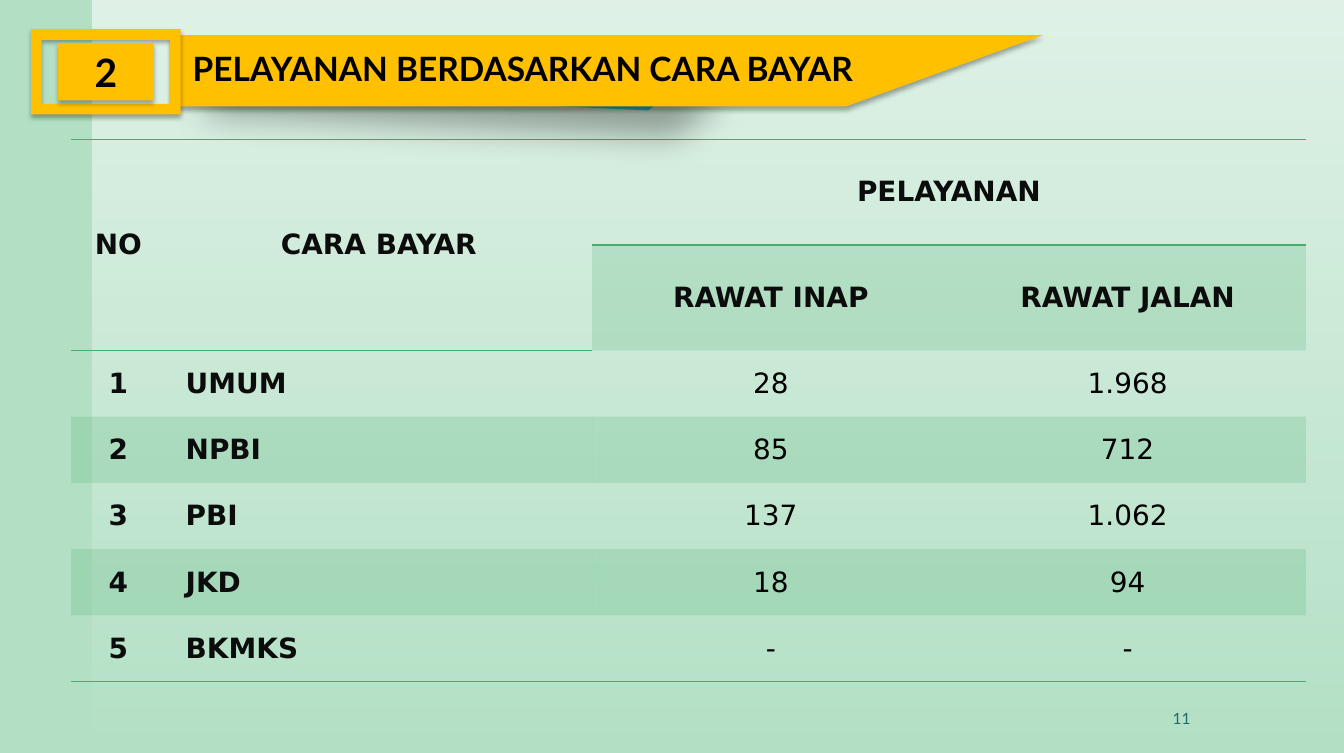
import dataclasses

import pptx
import pptx.dml.color
import pptx.enum.shapes
import pptx.enum.text
import pptx.oxml
import pptx.oxml.ns
import pptx.util
from pptx.util import Inches

qn = pptx.oxml.ns.qn
SHAPE = pptx.enum.shapes.MSO_SHAPE
ALIGN = pptx.enum.text.PP_ALIGN
MIDDLE = pptx.enum.text.MSO_ANCHOR.MIDDLE


@dataclasses.dataclass(frozen=True)
class Theme:
    """Colours, fonts and type sizes of the slide."""
    background: str = "B3E0C5"
    white: str = "FFFFFF"
    black: str = "000000"
    ink: str = "0C0C0C"
    green: str = "46AC6F"
    gold: str = "FFC000"
    teal: str = "1B91A1"
    page_number: str = "1F696F"
    heading_font: str = "Lato"
    table_font: str = "DejaVu Sans"
    badge_size: float = 28
    title_size: float = 24
    table_size: float = 20
    number_size: float = 11.1


THEME = Theme()
SOFT_SHADOW = (32, 3.5, 2.2, 90)
WIDE_SHADOW = (35, 25, 25, 45)
NO_GRID_STYLE = "{2D5ABB26-0587-4C30-8999-92F81FD0307C}"
COLUMNS = (0.94, 4.25, 3.56, 3.55)
HEADER_ROWS = (1.05, 1.05)
BODY_ROW = 0.66
HEADERS = (("NO", "CARA BAYAR", "PELAYANAN", ""), ("", "", "RAWAT INAP", "RAWAT JALAN"))
PAYMENTS = (
    ("1", "UMUM", "28", "1.968"),
    ("2", "NPBI", "85", "712"),
    ("3", "PBI", "137", "1.062"),
    ("4", "JKD", "18", "94"),
    ("5", "BKMKS", "-", "-"),
)


def rgb(code):
    """Turn a hex code into a colour."""
    return pptx.dml.color.RGBColor.from_string(code)


def xml(body):
    """Parse one element in the drawing namespace."""
    head, tail = body.split(" ", 1)
    return pptx.oxml.parse_xml(f"{head} {pptx.oxml.ns.nsdecls('a')} {tail}")


def set_alpha(colour, percent):
    """Give a colour element an opacity."""
    colour.append(xml(f'<a:alpha val="{percent * 1000}"/>'))


def write(frame, text, font, size, colour, bold=False, align=ALIGN.LEFT):
    """Fill a text frame with one formatted paragraph."""
    frame.text = text
    para = frame.paragraphs[0]
    para.alignment = align
    para.font.name = font
    para.font.size = pptx.util.Pt(size)
    para.font.bold = bold
    para.font.color.rgb = rgb(colour)


def paint(shape, colour, shadow):
    """Fill a shape without outline and cast a shadow."""
    shape.fill.solid()
    shape.fill.fore_color.rgb = rgb(colour)
    shape.line.fill.background()
    shape.shadow.inherit = False
    opacity, blur, distance, angle = shadow
    shape.element.spPr.find(qn("a:effectLst")).append(xml(
        f'<a:outerShdw blurRad="{pptx.util.Pt(blur)}" dist="{pptx.util.Pt(distance)}" '
        f'dir="{angle * 60000}" algn="ctr" rotWithShape="0"><a:srgbClr val="{THEME.black}">'
        f'<a:alpha val="{opacity * 1000}"/></a:srgbClr></a:outerShdw>'))


def add_preset(page, kind, left, top, width, height):
    """Add a preset shape placed in inches."""
    return page.shapes.add_shape(kind, *map(Inches, (left, top, width, height)))


def add_outline(page, points, colour, shadow):
    """Add a closed polygon through points in inches."""
    start, *rest = [(Inches(x), Inches(y)) for x, y in points]
    builder = page.shapes.build_freeform(*start)
    builder.add_line_segments(rest, close=True)
    paint(builder.convert_to_shape(), colour, shadow)


def add_backdrop(page):
    """Colour the page and lay a fading white panel over it."""
    page.background.fill.solid()
    page.background.fill.fore_color.rgb = rgb(THEME.background)
    panel = add_preset(page, SHAPE.RECTANGLE, 0.92, 0, 12.47, 7.5)
    panel.shadow.inherit = False
    panel.line.fill.background()
    panel.fill.gradient()
    panel.fill.gradient_angle = 270
    for stop, position in zip(panel.fill.gradient_stops, (0, 1)):
        stop.color.rgb = rgb(THEME.white)
        stop.position = position
    for colour, opacity in zip(panel.element.spPr.iter(qn("a:srgbClr")), (60, 0)):
        set_alpha(colour, opacity)


def rule(cell, *sides):
    """Draw green lines on the named sides of a cell."""
    for index, side in enumerate(sides):
        cell._tc.get_or_add_tcPr().insert(index, xml(
            f'<a:ln{side} w="{pptx.util.Pt(1)}"><a:solidFill><a:srgbClr val="{THEME.green}"/>'
            f'</a:solidFill></a:ln{side}>'))


def format_cell(cell, text, is_value, align, banded):
    """Write a table cell and set its margins and fill."""
    write(cell.text_frame, text, THEME.table_font, THEME.table_size,
          THEME.black if is_value else THEME.ink, not is_value, align)
    cell.vertical_anchor = MIDDLE
    cell.margin_left = cell.margin_right = Inches(0 if is_value else 0.2)
    cell.margin_top = cell.margin_bottom = Inches(0 if is_value else 0.08)
    if banded:
        cell.fill.solid()
        cell.fill.fore_color.rgb = rgb(THEME.green)
        set_alpha(next(cell._tc.iter(qn("a:tcPr"))).find(f".//{qn('a:srgbClr')}"), 20)
    else:
        cell.fill.background()


def add_payment_table(page):
    """Add the table of services by payment method."""
    rows = HEADERS + PAYMENTS
    heights = HEADER_ROWS + (BODY_ROW,) * len(PAYMENTS)
    holder = page.shapes.add_table(len(rows), len(COLUMNS), Inches(0.71), Inches(1.39),
                                   Inches(sum(COLUMNS)), Inches(sum(heights)))
    table = holder.table
    table.first_row = table.horz_banding = False
    next(holder.element.iter(qn("a:tableStyleId"))).text = NO_GRID_STYLE
    for column, width in zip(table.columns, COLUMNS):
        column.width = Inches(width)
    for row, height in zip(table.rows, heights):
        row.height = Inches(height)

    first_body = len(HEADERS)
    for r, texts in enumerate(rows):
        for c, text in enumerate(texts):
            is_body = r >= first_body
            align = ALIGN.LEFT if is_body and c == 1 else ALIGN.CENTER
            banded = r % 2 == 1 and (is_body or c >= 2)
            format_cell(table.cell(r, c), text, is_body and c >= 2, align, banded)

    for c in range(len(COLUMNS)):
        rule(table.cell(0, c), "T", "B")
        rule(table.cell(len(rows) - 1, c), "B")
    for c in (0, 1):
        rule(table.cell(1, c), "B")
        table.cell(0, c).merge(table.cell(1, c))
    table.cell(0, 2).merge(table.cell(0, 3))


def add_page_number(page):
    """Add the page number at the foot."""
    box = page.shapes.add_textbox(Inches(8.84), Inches(6.95), Inches(3.12), Inches(0.4))
    box.text_frame.word_wrap = True
    box.text_frame.vertical_anchor = MIDDLE
    write(box.text_frame, "11", THEME.heading_font, THEME.number_size,
          THEME.page_number, align=ALIGN.RIGHT)


def add_banner(page):
    """Add the ribbon, the numbered badge and the title."""
    add_outline(page, ((1.83, 0.4), (6.86, 0.64), (6.86, 0.78), (6.46, 1.1), (1.81, 0.88)),
                THEME.teal, WIDE_SHADOW)
    add_outline(page, ((1.71, 0.35), (10.39, 0.35), (8.43, 1.06), (1.71, 1.06)),
                THEME.gold, SOFT_SHADOW)
    paint(add_preset(page, SHAPE.FRAME, 0.31, 0.29, 1.49, 0.85), THEME.gold, SOFT_SHADOW)
    badge = add_preset(page, SHAPE.RECTANGLE, 0.58, 0.43, 0.95, 0.57)
    paint(badge, THEME.gold, SOFT_SHADOW)
    badge.text_frame.vertical_anchor = MIDDLE
    write(badge.text_frame, "2", THEME.heading_font, THEME.badge_size, THEME.black, True,
          ALIGN.CENTER)

    title = page.shapes.title
    title.left, title.top, title.width, title.height = map(Inches, (1.92, 0.43, 8.23, 0.5))
    frame = title.text_frame
    frame.word_wrap = True
    frame.auto_size = pptx.enum.text.MSO_AUTO_SIZE.NONE
    frame.vertical_anchor = MIDDLE
    frame.margin_left = 0
    frame.margin_top = frame.margin_bottom = Inches(0.05)
    write(frame, "PELAYANAN BERDASARKAN CARA BAYAR", THEME.heading_font, THEME.title_size,
          THEME.black, True)
    badge.element.addnext(title.element)


def main():
    """Build the slide and save the deck."""
    deck = pptx.Presentation()
    deck.slide_width, deck.slide_height = Inches(13.39), Inches(7.5)
    page = deck.slides.add_slide(deck.slide_layouts.get_by_name("Title Only"))
    add_backdrop(page)
    add_payment_table(page)
    add_page_number(page)
    add_banner(page)
    deck.save("out.pptx")


if __name__ == "__main__":
    main()
